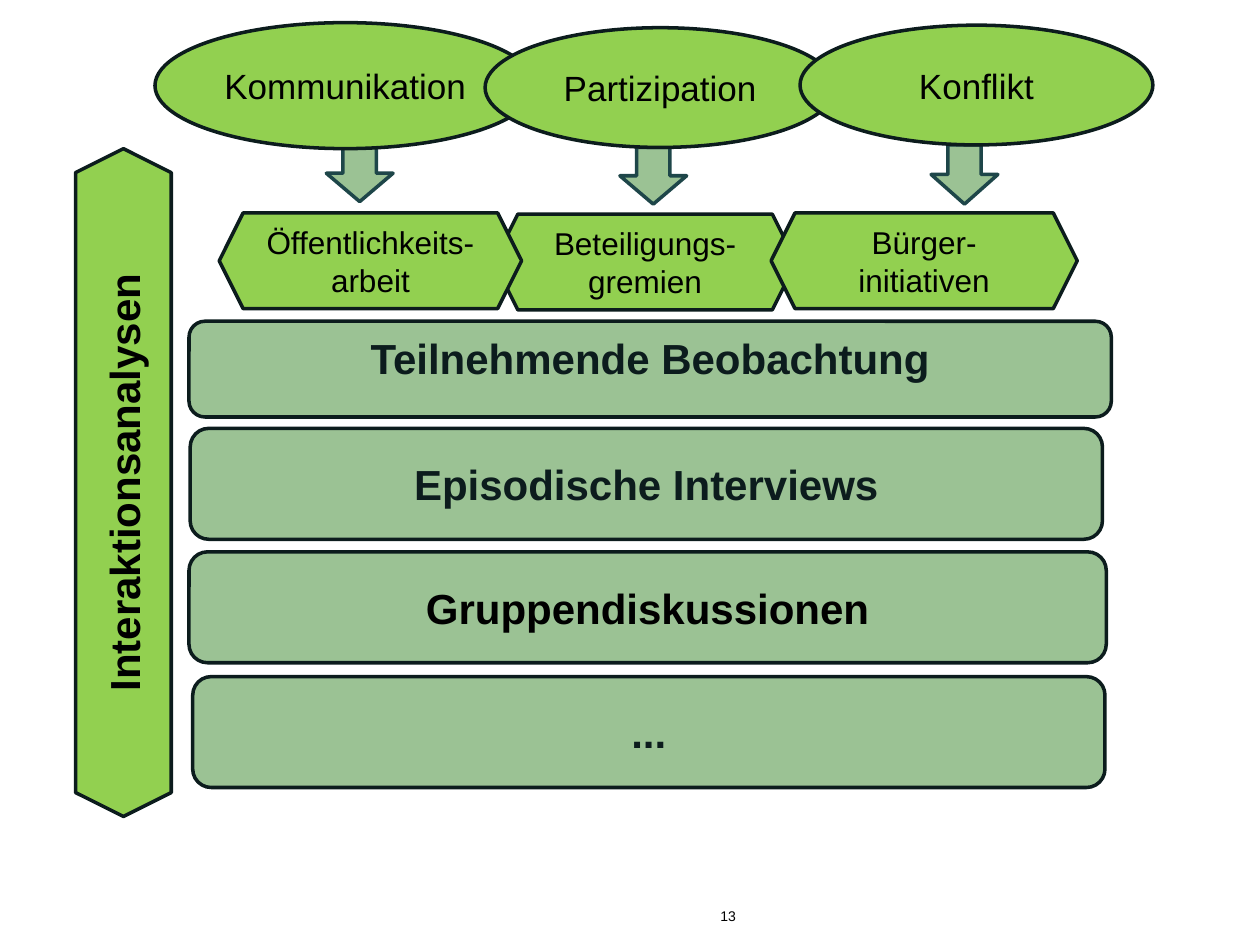
from dataclasses import dataclass

from pptx import Presentation
from pptx.dml.color import RGBColor
from pptx.enum.shapes import MSO_SHAPE
from pptx.enum.text import MSO_ANCHOR, PP_ALIGN
from pptx.util import Inches, Pt

ELLIPSE = MSO_SHAPE.OVAL
HEXAGON = MSO_SHAPE.HEXAGON
ARROW = MSO_SHAPE.DOWN_ARROW
BAR = MSO_SHAPE.ROUNDED_RECTANGLE
TOP, MIDDLE = MSO_ANCHOR.TOP, MSO_ANCHOR.MIDDLE
CENTER, RIGHT = PP_ALIGN.CENTER, PP_ALIGN.RIGHT


@dataclass(frozen=True)
class Theme:
    """Colours, font and type sizes of the slide."""
    font: str = "Arial"
    lime: RGBColor = RGBColor(0x92, 0xD0, 0x50)
    sage: RGBColor = RGBColor(0x9B, 0xC2, 0x94)
    ink: RGBColor = RGBColor(0x0C, 0x1C, 0x1D)
    teal: RGBColor = RGBColor(0x1E, 0x46, 0x49)
    black: RGBColor = RGBColor(0, 0, 0)
    outline: Pt = Pt(2)
    heading: Pt = Pt(24)
    concept: Pt = Pt(20)
    practice: Pt = Pt(18)
    number: Pt = Pt(8)


THEME = Theme()

CONCEPTS = [
    ("Kommunikation", (1.23, 0.18, 3.02, 1)),
    ("Partizipation", (3.85, 0.22, 2.78, 0.95)),
    ("Konflikt", (6.35, 0.2, 2.8, 0.95)),
]
PRACTICES = [
    ("Beteiligungs-gremien", (3.92, 1.7, 2.4, 0.76)),
    ("Öffentlichkeits-arbeit", (1.74, 1.69, 2.4, 0.76)),
    ("Bürger-initiativen", (6.12, 1.69, 2.43, 0.76)),
]
METHODS = [
    ("Teilnehmende Beobachtung", (1.5, 2.55, 7.32, 0.76), THEME.ink, TOP),
    ("Episodische Interviews", (1.51, 3.4, 7.24, 0.88), THEME.ink, MIDDLE),
    ("Gruppendiskussionen", (1.5, 4.38, 7.28, 0.88), THEME.black, MIDDLE),
    ("...", (1.53, 5.37, 7.24, 0.88), THEME.ink, MIDDLE),
]
ARROWS = [
    (2.59, 1.15, 0.53, 0.45),
    (4.92, 1.17, 0.53, 0.45),
    (7.39, 1.15, 0.53, 0.47),
]


def add_figure(shapes, kind, place, fill, line=THEME.ink):
    """Add a filled, outlined preset shape without shadow."""
    figure = shapes.add_shape(kind, *map(Inches, place))
    figure.shadow.inherit = False
    figure.fill.solid()
    figure.fill.fore_color.rgb = fill
    figure.line.color.rgb = line
    figure.line.width = THEME.outline
    return figure


def write(shape, text, size, color=THEME.black, bold=False, align=CENTER, anchor=MIDDLE):
    """Set and format the single paragraph of a shape."""
    frame = shape.text_frame
    frame.word_wrap = True
    frame.vertical_anchor = anchor
    frame.text = text
    para = frame.paragraphs[0]
    para.alignment = align
    font = para.runs[0].font
    font.name, font.size, font.bold = THEME.font, size, bold
    font.color.rgb = color


def add_methods(page):
    """Stack the bars of the research methods."""
    for text, place, color, anchor in METHODS:
        bar = add_figure(page.shapes, BAR, place, THEME.sage)
        write(bar, text, THEME.heading, color, bold=True, anchor=anchor)


def add_labels(shapes, kind, items, size):
    """Add a row of lime shapes, each with its label."""
    for text, place in items:
        write(add_figure(shapes, kind, place, THEME.lime), text, size)


def add_side_label(page):
    """Add the upright hexagon along the left edge."""
    side = add_figure(page.shapes, HEXAGON, (-1.67, 3.45, 5.3, 0.76), THEME.lime)
    side.rotation = 270
    write(side, "Interaktionsanalysen", THEME.heading, bold=True)


def add_page_number(page):
    """Add the page number at the foot."""
    box = page.shapes.add_textbox(*map(Inches, (4.87, 7.15, 1.07, 0.35)))
    write(box, "13", THEME.number, align=RIGHT, anchor=TOP)


def main():
    """Build the slide and save the deck."""
    deck = Presentation()
    deck.slide_width, deck.slide_height = Inches(10), Inches(7.5)
    page = deck.slides.add_slide(deck.slide_layouts[6])
    add_page_number(page)
    for place in ARROWS:
        add_figure(page.shapes, ARROW, place, THEME.sage, THEME.teal)
    add_methods(page)
    concepts = page.shapes.add_group_shape()
    add_labels(concepts.shapes, ELLIPSE, CONCEPTS, THEME.concept)
    add_labels(page.shapes, HEXAGON, PRACTICES, THEME.practice)
    add_side_label(page)
    deck.save("out.pptx")


if __name__ == "__main__":
    main()
